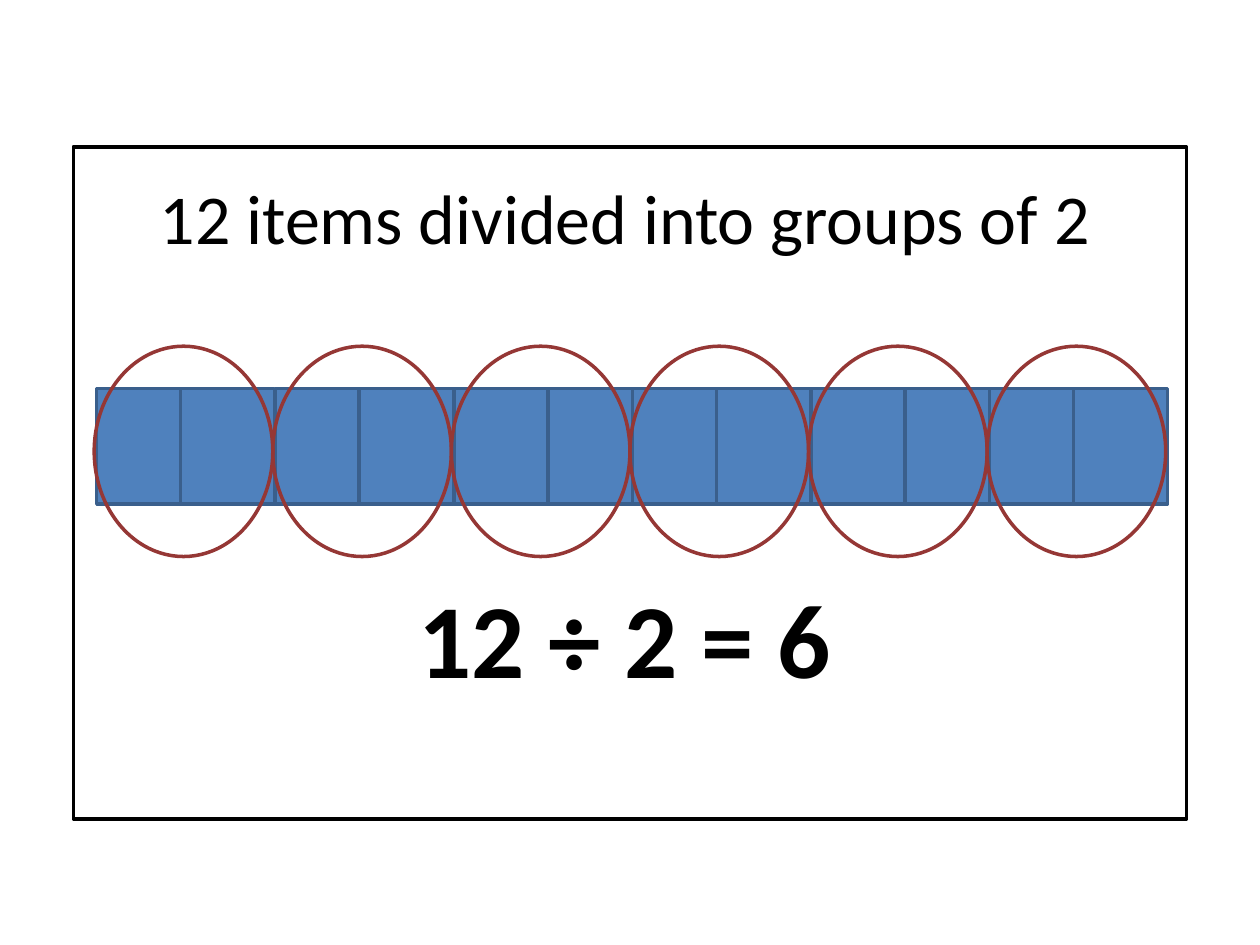
from pptx import Presentation
from pptx.dml.color import RGBColor
from pptx.enum.shapes import MSO_SHAPE
from pptx.enum.text import PP_ALIGN
from pptx.util import Cm, Pt

BLACK = RGBColor(0x00, 0x00, 0x00)
BLUE = RGBColor(0x4F, 0x81, 0xBD)
DARK_BLUE = RGBColor(0x3A, 0x5F, 0x8C)
RED = RGBColor(0x95, 0x37, 0x35)

# Text, size, bold, space before (points)
LINES = [
    ("12 items divided into groups of 2", 40, False, 0),
    ("12 ÷ 2 = 6", 60, True, 180),
]

# One entry per pair: distance from its first item to its second (cm)
PAIR_OFFSETS = [1.69, 1.69, 1.9, 1.69, 1.9, 1.69]
PAIR_STEP = 3.6
ITEM_LEFT, ITEM_TOP, ITEM_WIDTH, ITEM_HEIGHT = 1.95, 7.83, 1.9, 2.33
RING_LEFT, RING_TOP, RING_HEIGHT = 1.9, 6.98, 4.24


def add_outlined(shapes, kind, left, top, width, height, line, fill=None):
    shape = shapes.add_shape(kind, Cm(left), Cm(top), Cm(width), Cm(height))
    shape.shadow.inherit = False
    shape.line.color.rgb = line
    shape.line.width = Pt(2)
    if fill is None:
        shape.fill.background()
    else:
        shape.fill.solid()
        shape.fill.fore_color.rgb = fill


deck = Presentation()
deck.slide_width, deck.slide_height = Cm(25.4), Cm(19.05)
page = deck.slides.add_slide(deck.slide_layouts[6])

# Heading and equation
box = page.shapes.add_textbox(Cm(1.27), Cm(3.39), Cm(22.65), Cm(12.57))
frame = box.text_frame
frame.word_wrap = True
for index, (text, size, bold, space) in enumerate(LINES):
    para = frame.add_paragraph() if index else frame.paragraphs[0]
    para.alignment = PP_ALIGN.CENTER
    para.space_before = Pt(space)
    span = para.add_run()
    span.text = text
    span.font.name = "Calibri"
    span.font.size = Pt(size)
    span.font.bold = bold
    span.font.color.rgb = BLACK

# Frame around the content
add_outlined(page.shapes, MSO_SHAPE.RECTANGLE, 1.48, 2.96, 22.44, 13.55, BLACK)

# Bar of twelve items
items = page.shapes.add_group_shape()
for pair, offset in enumerate(PAIR_OFFSETS):
    for shift in (0, offset):
        add_outlined(items.shapes, MSO_SHAPE.RECTANGLE,
                     ITEM_LEFT + pair * PAIR_STEP + shift, ITEM_TOP,
                     ITEM_WIDTH, ITEM_HEIGHT, DARK_BLUE, BLUE)

# One ring around each pair
rings = page.shapes.add_group_shape()
for pair in range(len(PAIR_OFFSETS)):
    add_outlined(rings.shapes, MSO_SHAPE.OVAL, RING_LEFT + pair * PAIR_STEP,
                 RING_TOP, PAIR_STEP, RING_HEIGHT, RED)

deck.save("out.pptx")
